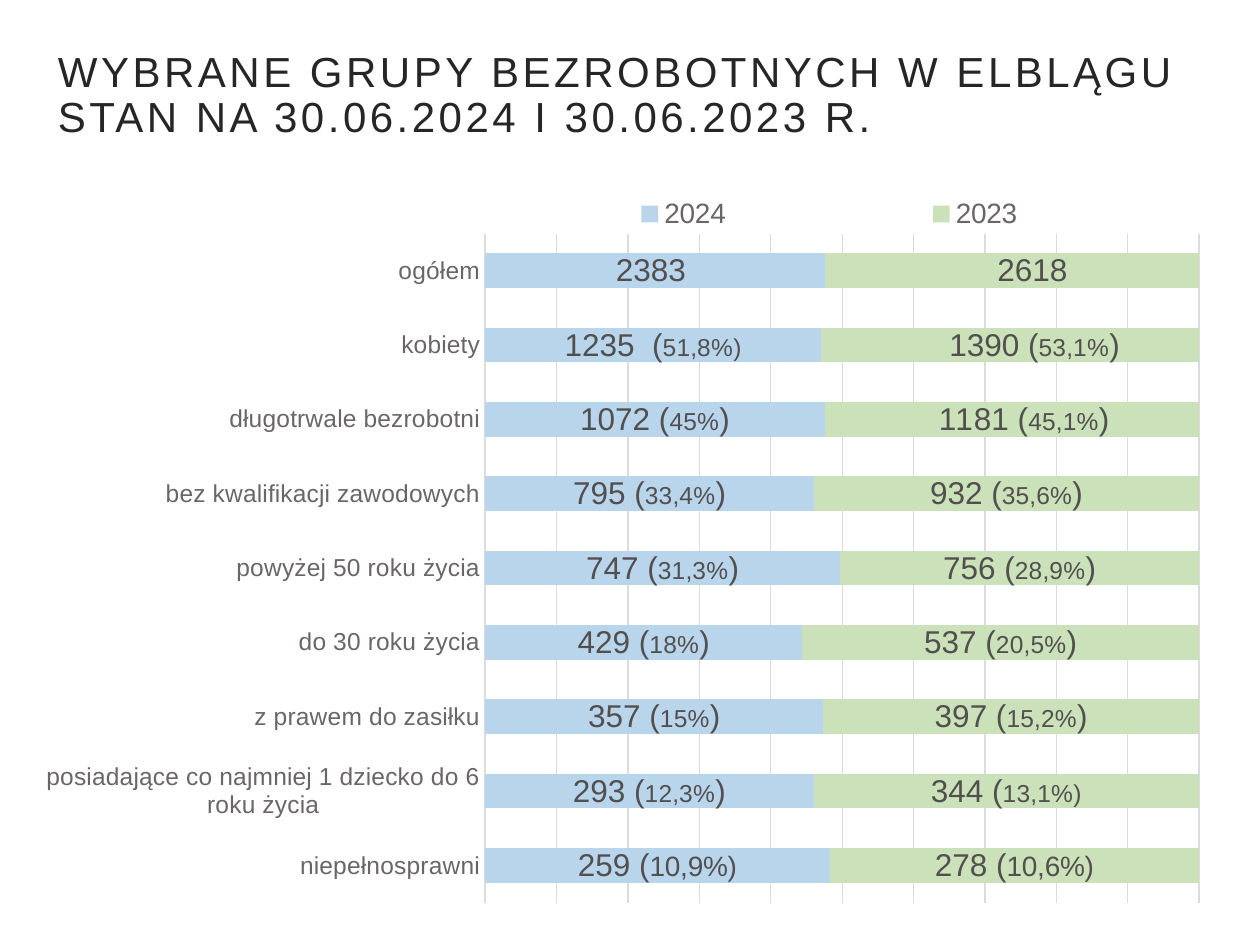
"""Slide with a stacked bar chart of unemployed groups in Elbląg."""
from lxml.etree import SubElement as Sub
from pptx import Presentation
from pptx.chart.data import CategoryChartData as Data
from pptx.dml.color import RGBColor as RGB
from pptx.enum.chart import XL_CHART_TYPE as Kind, XL_LABEL_POSITION as Spot
from pptx.enum.chart import XL_LEGEND_POSITION as Side, XL_TICK_MARK as Tick
from pptx.enum.text import MSO_ANCHOR as Anchor
from pptx.oxml import parse_xml
from pptx.oxml.ns import nsdecls, qn
from pptx.util import Pt

HUE = {"title": "262626", "base": "171616", "axis": "6A6666", "grid": "DDDBDB",
       "label": "524F4F", "2024": "B9D5EC", "2023": "CAE1B9"}
ROWS = [
    ("niepełnosprawni", 259, "10,9%", 278, "10,6%"),
    ("posiadające co najmniej 1 dziecko do 6 roku życia", 293, "12,3%", 344, "13,1%"),
    ("z prawem do zasiłku", 357, "15%", 397, "15,2%"),
    ("do 30 roku życia", 429, "18%", 537, "20,5%"),
    ("powyżej 50 roku życia", 747, "31,3%", 756, "28,9%"),
    ("bez kwalifikacji zawodowych", 795, "33,4%", 932, "35,6%"),
    ("długotrwale bezrobotni", 1072, "45%", 1181, "45,1%"),
    ("kobiety", 1235, "51,8%", 1390, "53,1%"),
    ("ogółem", 2383, "", 2618, ""),
]
SHIFT = {1181: 0.01, 1390: 0.02, 2618: 0.02}
SMALL = {344, 1235}


def style(font, size, hue, name="Arial"):
    font.size, font.name = Pt(size), name
    font.color.rgb = RGB.from_string(HUE[hue])


def layout(**vals):
    tags = "".join(f'<c:{tag} val="{val}"/>' for tag, val in vals.items())
    return parse_xml(f'<c:layout {nsdecls("c")}><c:manualLayout>{tags}'
                     '</c:manualLayout></c:layout>')


deck = Presentation()
deck.slide_width, deck.slide_height = Pt(720), Pt(540)
slide = deck.slides.add_slide(deck.slide_layouts[6])

frame = slide.shapes.add_textbox(Pt(11.5), Pt(15.8), Pt(697.7), Pt(78.5)).text_frame
frame.word_wrap, frame.vertical_anchor = True, Anchor.MIDDLE
frame.margin_left = frame.margin_right = Pt(14.4)
frame.margin_top = frame.margin_bottom = Pt(14.4)
para = frame.paragraphs[0]
run = para.add_run()
run.text = "WYBRANE GRUPY BEZROBOTNYCH W ELBLĄGU STAN NA 30.06.2024 I 30.06.2023 R."
para.line_spacing = 0.9
para._p.get_or_add_pPr().set("marL", str(Pt(7.2)))
style(run.font, 24, "title")
run._r.get_or_add_rPr().set("spc", "200")

data = Data()
data.categories = [row[0] for row in ROWS]
data.add_series("2024", [row[1] for row in ROWS])
data.add_series("2023", [row[3] for row in ROWS])
chart = slide.shapes.add_chart(Kind.BAR_STACKED_100, Pt(8.6), Pt(94.3),
                               Pt(699.8), Pt(430.6), data).chart
style(chart.font, 10, "base", "Cabin")
chart.has_title = False

area = chart._chartSpace.chart.plotArea
for old in area.findall(qn("c:layout")):
    area.remove(old)
area.insert(0, layout(layoutTarget="inner", xMode="edge", yMode="edge",
                      x=0.384, y=0.091, w=0.583, h=0.888))

chart.has_legend = True
key = chart.legend
key.position, key.include_in_layout = Side.BOTTOM, False
style(key.font, 16, "axis")
for old in key._element.findall(qn("c:layout")):
    key._element.remove(old)
key._element.find(qn("c:legendPos")).addnext(
    layout(xMode="edge", yMode="edge", x=0.35, y=0.04, w=0.63, h=0.05))

cat, val = chart.category_axis, chart.value_axis
cat.major_tick_mark = cat.minor_tick_mark = Tick.NONE
style(cat.tick_labels.font, 14, "axis")
val.visible, val.has_major_gridlines, val.major_unit = False, True, 0.1
for line, width in ((cat.format.line, 1), (val.major_gridlines.format.line, 0.75)):
    line.width = Pt(width)
    line.color.rgb = RGB.from_string(HUE["grid"])

plot = chart.plots[0]
plot.gap_width, plot.overlap, plot.vary_by_categories = 115, 100, False
for col, bar in enumerate(plot.series):
    bar.format.fill.solid()
    bar.format.fill.fore_color.rgb = RGB.from_string(HUE[bar.name])
    labels = bar.data_labels
    labels.show_value, labels.position = True, Spot.CENTER
    style(labels.font, 18, "label")
    for idx, row in enumerate(ROWS):
        num, part = row[1 + 2 * col:3 + 2 * col]
        size = 16 if idx == 0 else 14
        end = size if idx == 0 or num in SMALL else 18
        gap = "  " if num == 1235 else " "
        bits = [(f"{num}{gap}", 18)]
        if part:
            bits += [("(", 18), (part, size), (")", end)]
        label = bar.points[idx].data_label
        para = label.text_frame.paragraphs[0]
        for text, pts in bits:
            run = para.add_run()
            run.text = text
            style(run.font, pts, "label")
        label.position = Spot.CENTER
        if num in SHIFT:
            node = label._dLbl
            for old in node.findall(qn("c:layout")):
                node.remove(old)
            node.find(qn("c:idx")).addnext(layout(x=SHIFT[num], y=0))

deck.save("out.pptx")
